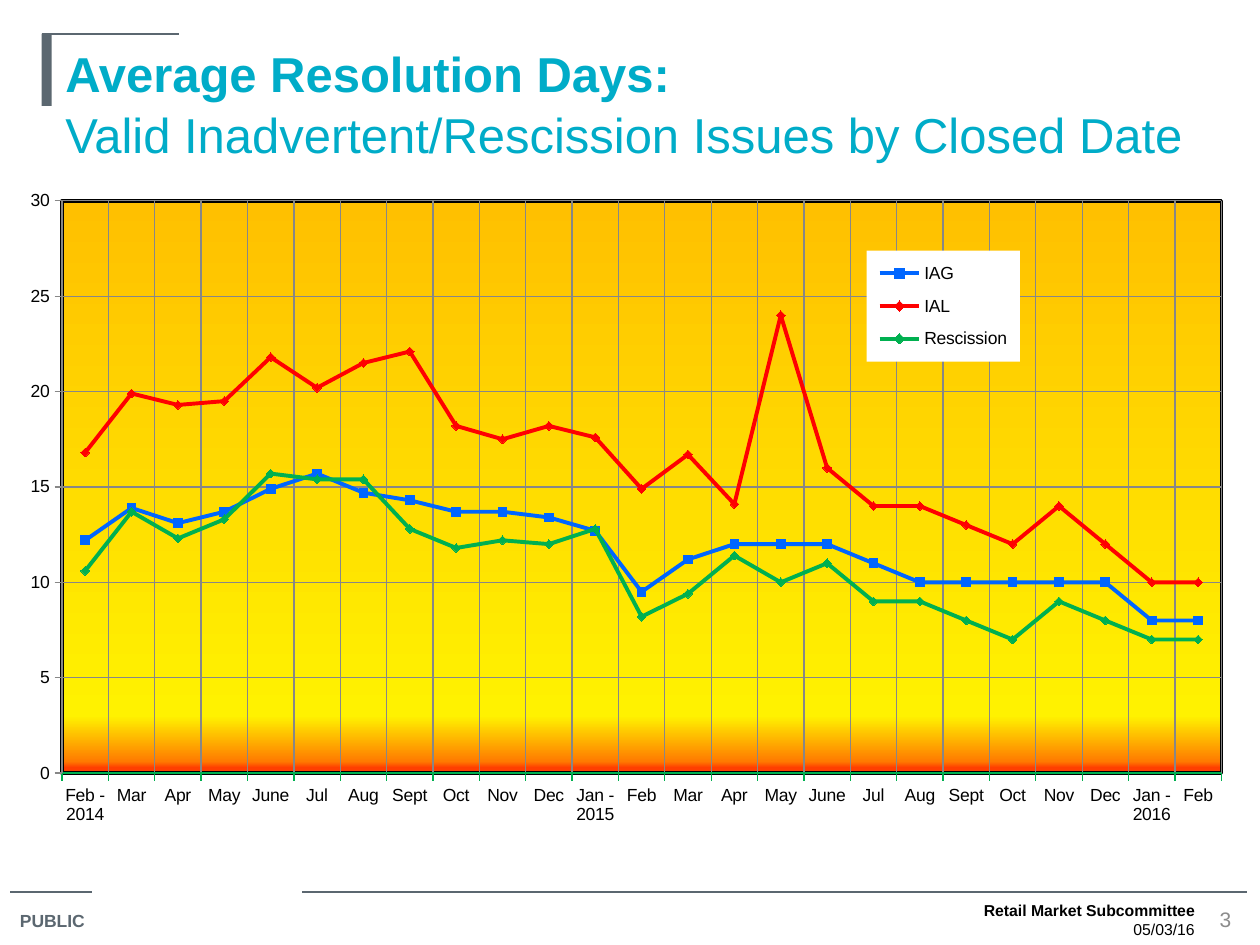
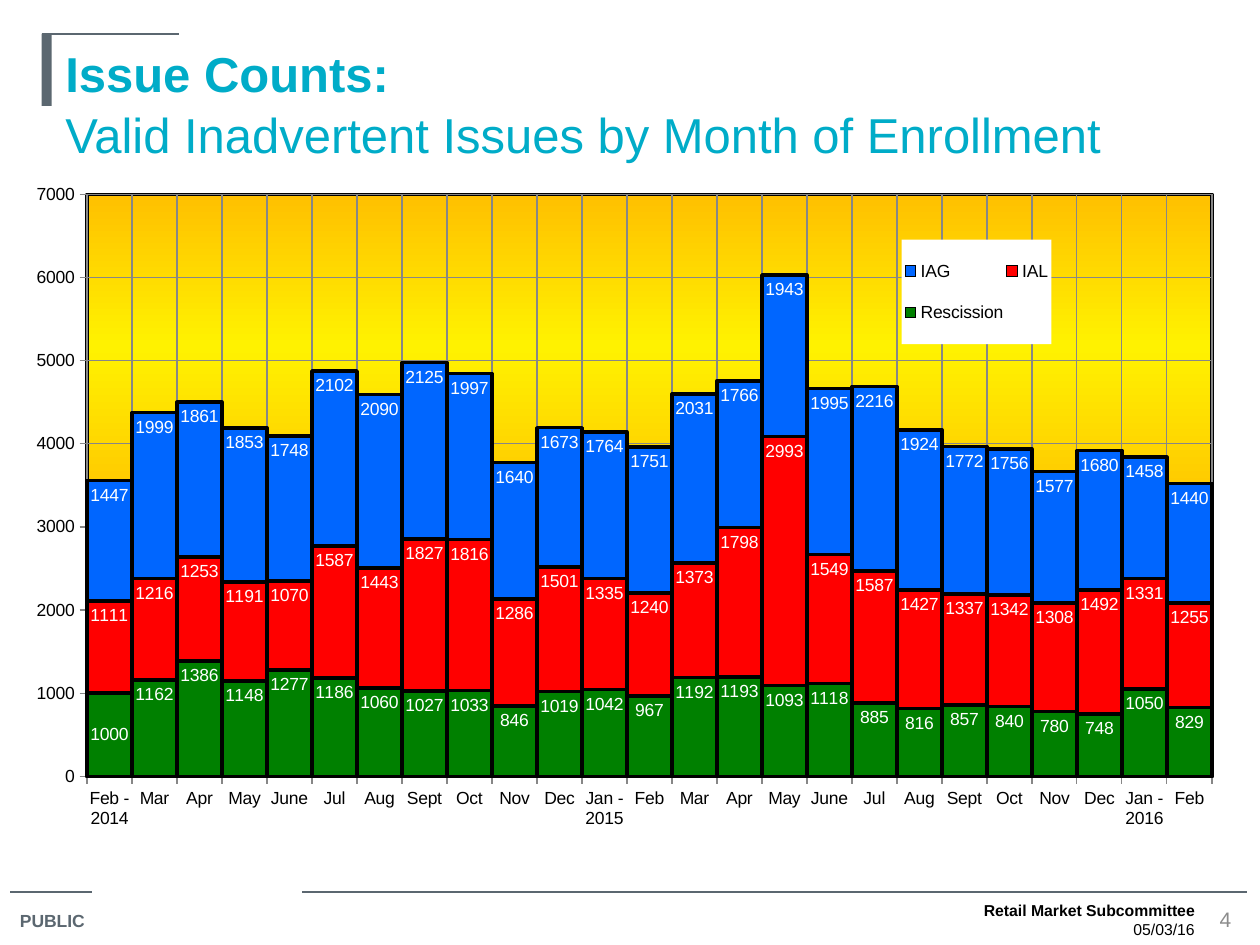
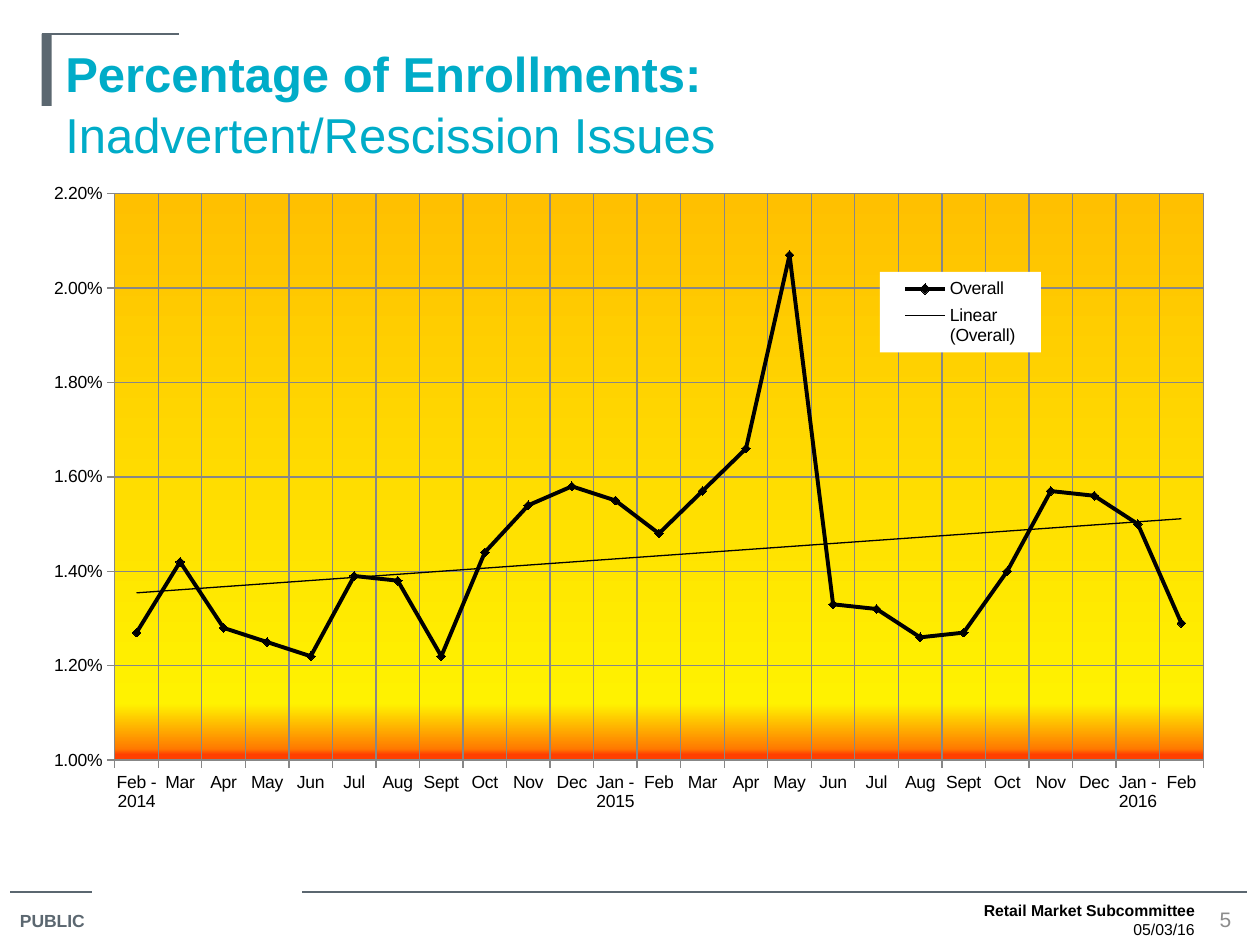
from lxml import etree
from pptx import Presentation
from pptx.chart.data import CategoryChartData
from pptx.dml.color import RGBColor
from pptx.enum.chart import (XL_CHART_TYPE, XL_LABEL_POSITION, XL_LEGEND_POSITION,
                             XL_MARKER_STYLE, XL_TICK_MARK)
from pptx.enum.shapes import MSO_CONNECTOR, MSO_SHAPE
from pptx.enum.text import MSO_ANCHOR, PP_ALIGN
from pptx.oxml.ns import qn
from pptx.util import Inches, Pt

LINE = XL_CHART_TYPE.LINE_MARKERS
STACK = XL_CHART_TYPE.COLUMN_STACKED
SQUARE, DIAMOND = XL_MARKER_STYLE.SQUARE, XL_MARKER_STYLE.DIAMOND
LEFT, CENTER, RIGHT = PP_ALIGN.LEFT, PP_ALIGN.CENTER, PP_ALIGN.RIGHT
TOP, MIDDLE = MSO_ANCHOR.TOP, MSO_ANCHOR.MIDDLE

SLATE = RGBColor(0x5B, 0x67, 0x70)
TEAL = RGBColor(0x00, 0xAC, 0xC8)
GRAY = RGBColor(0x8C, 0x8C, 0x8C)
GRID = RGBColor(0x87, 0x87, 0x87)
BLACK = RGBColor(0x00, 0x00, 0x00)
WHITE = RGBColor(0xFF, 0xFF, 0xFF)
BLUE = RGBColor(0x00, 0x66, 0xFF)
RED = RGBColor(0xFF, 0x00, 0x00)
GREEN = RGBColor(0x00, 0xB0, 0x50)
DARK_GREEN = RGBColor(0x00, 0x80, 0x00)
AMBER = RGBColor(0xFF, 0xC0, 0x00)
YELLOW = RGBColor(0xFF, 0xF2, 0x00)
ORANGE = RGBColor(0xFF, 0x7A, 0x00)
FLAME = RGBColor(0xFF, 0x3F, 0x00)

FONT = "Arial"
FIRST_PAGE = 3
RULES = [(0.08, 7.08, 0.73), (2.4, 7.08, 9.9), (0.33, 0.27, 1.42)]


def month_names(june):
    year = ["Feb", "Mar", "Apr", "May", june, "Jul", "Aug", "Sept", "Oct", "Nov", "Dec"]
    return ["Feb - 2014", *year[1:], "Jan - 2015", *year, "Jan - 2016", "Feb"]


SLIDES = [
    {"title": ("Average Resolution Days:", "Valid Inadvertent/Rescission Issues by Closed Date"),
     "kind": LINE, "at": (0.09, 1.33, 9.81, 5.5), "plot": (0.041, 0.048, 0.938, 0.826),
     "legend": (6.88, 1.99, 1.22, 0.88), "months": month_names("June"),
     "scale": (0, 30, 5), "format": "General", "yellow_at": 90,
     "border": (BLACK, 2), "axis_color": GREEN, "trend": False,
     "series": [
         ("IAG", BLUE, SQUARE, [12.2, 13.9, 13.1, 13.7, 14.9, 15.7, 14.7, 14.3, 13.7, 13.7, 13.4, 12.7,
                                9.5, 11.2, 12, 12, 12, 11, 10, 10, 10, 10, 10, 8, 8]),
         ("IAL", RED, DIAMOND, [16.8, 19.9, 19.3, 19.5, 21.8, 20.2, 21.5, 22.1, 18.2, 17.5, 18.2, 17.6,
                                14.9, 16.7, 14.1, 24, 16, 14, 14, 13, 12, 14, 12, 10, 10]),
         ("Rescission", GREEN, DIAMOND, [10.6, 13.7, 12.3, 13.3, 15.7, 15.4, 15.4, 12.8, 11.8, 12.2, 12,
                                         12.8, 8.2, 9.4, 11.4, 10, 11, 9, 9, 8, 7, 9, 8, 7, 7])]},
    {"title": ("Issue Counts:", "Valid Inadvertent Issues by Month of Enrollment"),
     "kind": STACK, "at": (0.25, 1.37, 9.58, 5.38), "plot": (0.046, 0.032, 0.932, 0.859),
     "legend": (7.16, 1.9, 1.19, 0.83), "months": month_names("June"),
     "scale": (0, 7000, 1000), "format": "General", "yellow_at": 26,
     "border": (BLACK, 2), "axis_color": GRID, "trend": False,
     "series": [
         ("Rescission", DARK_GREEN, None, [1000, 1162, 1386, 1148, 1277, 1186, 1060, 1027, 1033, 846,
                                           1019, 1042, 967, 1192, 1193, 1093, 1118, 885, 816, 857,
                                           840, 780, 748, 1050, 829]),
         ("IAL", RED, None, [1111, 1216, 1253, 1191, 1070, 1587, 1443, 1827, 1816, 1286, 1501, 1335, 1240,
                             1373, 1798, 2993, 1549, 1587, 1427, 1337, 1342, 1308, 1492, 1331, 1255]),
         ("IAG", BLUE, None, [1447, 1999, 1861, 1853, 1748, 2102, 2090, 2125, 1997, 1640, 1673, 1764, 1751,
                              2031, 1766, 1943, 1995, 2216, 1924, 1772, 1756, 1577, 1680, 1458, 1440])]},
    {"title": ("Percentage of Enrollments:", "Inadvertent/Rescission Issues"),
     "kind": LINE, "at": (0.3, 1.25, 9.4, 5.75), "plot": (0.065, 0.05, 0.919, 0.782),
     "legend": (6.98, 2.16, 1.28, 0.64), "months": month_names("Jun"),
     "scale": (0.01, 0.022, 0.002), "format": "0.00%", "yellow_at": 90,
     "border": (GRID, 0.75), "axis_color": GRID, "trend": True,
     "series": [
         ("Overall", BLACK, DIAMOND, [0.0127, 0.0142, 0.0128, 0.0125, 0.0122, 0.0139, 0.0138, 0.0122,
                                      0.0144, 0.0154, 0.0158, 0.0155, 0.0148, 0.0157, 0.0166, 0.0207,
                                      0.0133, 0.0132, 0.0126, 0.0127, 0.014, 0.0157, 0.0156, 0.015,
                                      0.0129])]},
]


def set_font(font, size, color, bold=False):
    for name, value in {"name": FONT, "size": Pt(size), "bold": bold}.items():
        setattr(font, name, value)
    font.color.rgb = color


def set_line(line, color, width):
    line.color.rgb = color
    line.width = Pt(width)


def add_text(page, at, lines, size, color, align=LEFT, anchor=TOP, inset=(0.1, 0.05), spacing=None):
    frame = page.shapes.add_textbox(*map(Inches, at)).text_frame
    side, edge = map(Inches, inset)
    for name, value in {"word_wrap": True, "vertical_anchor": anchor, "margin_left": side,
                        "margin_right": side, "margin_top": edge, "margin_bottom": edge}.items():
        setattr(frame, name, value)
    for number, (text, bold) in enumerate(lines):
        para = frame.add_paragraph() if number else frame.paragraphs[0]
        para.alignment = align
        para.line_spacing = spacing
        span = para.add_run()
        span.text = text
        set_font(span.font, size, color, bold)


def add_frame(page, title, number):
    for left, top, right in RULES:
        rule = page.shapes.add_connector(MSO_CONNECTOR.STRAIGHT, Inches(left), Inches(top),
                                         Inches(right), Inches(top))
        set_line(rule.line, SLATE, 0.75)
        etree.SubElement(rule._element.spPr, qn("a:effectLst"))
    bar = page.shapes.add_shape(MSO_SHAPE.RECTANGLE, *map(Inches, (0.33, 0.27, 0.08, 0.57)))
    bar.shadow.inherit = False
    bar.fill.solid()
    bar.fill.fore_color.rgb = SLATE
    bar.line.fill.background()
    add_text(page, (0.06, 7.17, 0.77, 0.28), [("PUBLIC", True)], 10, SLATE)
    heading, subject = title
    add_text(page, (0.42, 0.27, 9.25, 1.25), [(heading, True), (subject, False)], 28, TEAL, spacing=1.05)
    add_text(page, (9.6, 7.18, 0.25, 0.23), [(str(number), False)], 12, GRAY, CENTER, MIDDLE, (0, 0))
    add_text(page, (7.5, 7.1, 2.08, 0.4),
             [("Retail Market Subcommittee", True), ("05/03/16", False)], 9, BLACK, RIGHT)


def chart_xml(body):
    return etree.fromstring(
        '<c:part xmlns:c="http://schemas.openxmlformats.org/drawingml/2006/chart" '
        f'xmlns:a="http://schemas.openxmlformats.org/drawingml/2006/main">{body}</c:part>')[0]


def layout_xml(shares, target=""):
    modes = "".join(f'<c:{axis}Mode val="edge"/>' for axis in "xy")
    sizes = "".join(f'<c:{axis} val="{share:.3f}"/>' for axis, share in zip("xywh", shares))
    return chart_xml(f"<c:layout><c:manualLayout>{target}{modes}{sizes}</c:manualLayout></c:layout>")


def line_xml(color, width):
    return (f'<a:ln w="{Pt(width)}"><a:solidFill><a:srgbClr val="{color}"/></a:solidFill></a:ln>')


def drop_layout(parent):
    for old in parent.findall(qn("c:layout")):
        parent.remove(old)


def style_plot(chart, content):
    area = chart._chartSpace.chart.plotArea
    drop_layout(area)
    area.insert(0, layout_xml(content["plot"], '<c:layoutTarget val="inner"/>'))
    stops = [(0, AMBER), (content["yellow_at"], YELLOW), (98, ORANGE), (99, FLAME)]
    colors = "".join(f'<a:gs pos="{share * 1000}"><a:srgbClr val="{color}"/></a:gs>'
                     for share, color in stops)
    area.append(chart_xml(
        f'<c:spPr><a:gradFill><a:gsLst>{colors}</a:gsLst><a:lin ang="5400000" scaled="0"/></a:gradFill>'
        f'{line_xml(*content["border"])}</c:spPr>'))


def style_legend(chart, content):
    chart.has_legend = True
    legend = chart.legend
    legend.position = XL_LEGEND_POSITION.RIGHT
    legend.include_in_layout = False
    set_font(legend.font, 10, BLACK)
    left, top, width, height = content["at"]
    x, y, w, h = content["legend"]
    element = legend._element
    drop_layout(element)
    overlay = element.find(qn("c:overlay"))
    overlay.addprevious(layout_xml(((x - left) / width, (y - top) / height, w / width, h / height)))
    overlay.addnext(chart_xml(
        f'<c:spPr><a:solidFill><a:srgbClr val="{WHITE}"/></a:solidFill><a:ln><a:noFill/></a:ln></c:spPr>'))


def style_axes(chart, content):
    for axis, color in ((chart.category_axis, content["axis_color"]), (chart.value_axis, GRID)):
        axis.has_major_gridlines = True
        axis.major_tick_mark = XL_TICK_MARK.OUTSIDE
        axis.minor_tick_mark = XL_TICK_MARK.NONE
        set_line(axis.major_gridlines.format.line, GRID, 0.75)
        set_line(axis.format.line, color, 0.75)
        set_font(axis.tick_labels.font, 10, BLACK)
        axis._element.find(qn("c:txPr")).find(qn("a:bodyPr")).set("rot", "0")
    values = chart.value_axis
    values.minimum_scale, values.maximum_scale, values.major_unit = content["scale"]
    values.tick_labels.number_format = content["format"]
    values.tick_labels.number_format_is_linked = False


def style_line(series, color, marker):
    series.smooth = False
    set_line(series.format.line, color, 2.25)
    series.marker.style = marker
    series.marker.size = 5
    series.marker.format.fill.solid()
    series.marker.format.fill.fore_color.rgb = color
    set_line(series.marker.format.line, color, 0.75)


def style_column(series, color):
    series.format.fill.solid()
    series.format.fill.fore_color.rgb = color
    set_line(series.format.line, BLACK, 2)
    labels = series.data_labels
    labels.show_value = True
    labels.position = XL_LABEL_POSITION.INSIDE_END
    set_font(labels.font, 10, WHITE)


def add_chart(page, content):
    data = CategoryChartData(number_format=content["format"])
    data.categories = content["months"]
    for name, _, _, values in content["series"]:
        data.add_series(name, values)
    chart = page.shapes.add_chart(content["kind"], *map(Inches, content["at"]), data).chart
    chart.has_title = False
    set_font(chart.font, 10, BLACK)
    style_plot(chart, content)
    style_legend(chart, content)
    style_axes(chart, content)
    plot = chart.plots[0]
    plot.vary_by_categories = False
    for series, (_, color, marker, _) in zip(plot.series, content["series"]):
        if marker:
            style_line(series, color, marker)
        else:
            style_column(series, color)
    if content["kind"] == STACK:
        plot.gap_width, plot.overlap = 0, 100
        label = plot.series[0].points[0].data_label
        set_font(label.font, 10, WHITE)
        label.position = XL_LABEL_POSITION.CENTER
    if content["trend"]:
        plot.series[0]._element.find(qn("c:cat")).addprevious(chart_xml(
            f'<c:trendline><c:spPr>{line_xml(BLACK, 0.75)}</c:spPr><c:trendlineType val="linear"/>'
            '<c:dispRSqr val="0"/><c:dispEq val="0"/></c:trendline>'))


def main():
    deck = Presentation()
    deck.slide_width, deck.slide_height = Inches(10), Inches(7.5)
    for number, content in enumerate(SLIDES, FIRST_PAGE):
        page = deck.slides.add_slide(deck.slide_layouts[6])
        add_frame(page, content["title"], number)
        add_chart(page, content)
    deck.save("out.pptx")


if __name__ == "__main__":
    main()
